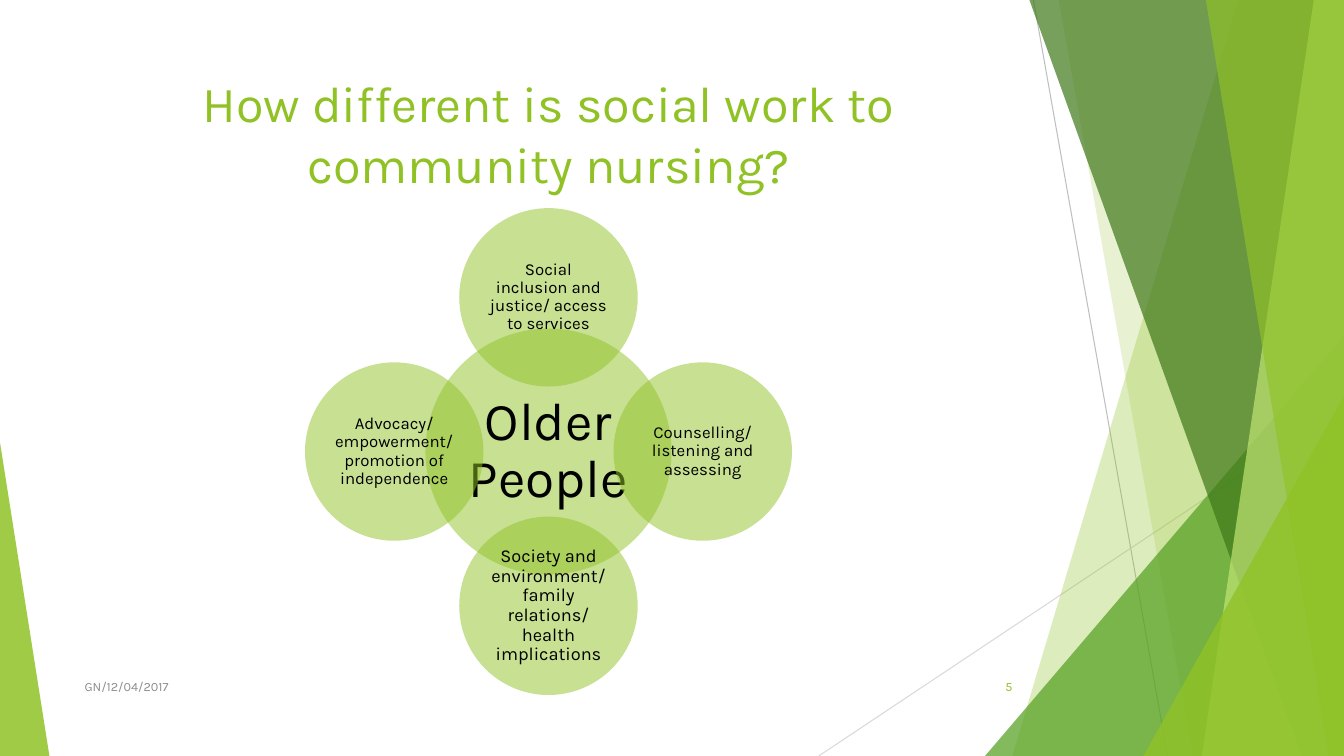
from dataclasses import dataclass

import pptx
import pptx.dml.color
import pptx.enum.dml
import pptx.enum.shapes
import pptx.enum.text
import pptx.oxml.ns
import pptx.util
from lxml import etree

Inches = pptx.util.Inches
Align = pptx.enum.text.PP_ALIGN
Anchor = pptx.enum.text.MSO_ANCHOR
Kind = pptx.enum.shapes.MSO_SHAPE

WIDTH, HEIGHT = 13.33, 7.5
GREEN = "90C226"
FONT = "Karla"


@dataclass
class Band:
    """A strip from its slanted left edge to the right side of the slide."""
    top: float
    foot: float
    color: str
    alpha: int


@dataclass
class Wedge:
    """A right triangle standing on the bottom of the slide."""
    left: float
    top: float
    width: float
    peak: float
    color: str
    alpha: int


@dataclass
class Disc:
    """A circle placed by its offset from the hub, in steps."""
    col: int
    row: int
    size: float
    text: str
    points: int
    inset: float = 0.02


@dataclass
class Ray:
    start: tuple[float, float]
    end: tuple[float, float]
    color: str


RAYS = [
    Ray((10.25, 0), (11.58, HEIGHT), "BFBFBF"),
    Ray((WIDTH, 4.03), (8.12, HEIGHT), "D9D9D9"),
]
PANES = [
    Band(12.28, 10.04, GREEN, 30),
    Band(10.5, 11.83, GREEN, 20),
    Wedge(9.77, 3.33, 3.56, 1, "54A021", 72),
    Band(10.21, 12.91, "3F7819", 70),
    Band(13.03, 11.92, "C0E474", 70),
    Band(11.96, 13.18, GREEN, 65),
    Wedge(11.34, 3.93, 1.99, 1, GREEN, 80),
    Wedge(0, 4.39, 0.49, 0, GREEN, 85),
]
HUB_X, HUB_Y, STEP = 5.44, 4.48, 1.53
PETAL = 1.77
DISCS = [
    Disc(0, 0, 2.44, "Older People", 38, 0.05),
    Disc(0, -1, PETAL, "Social inclusion and justice/ access to services", 12),
    Disc(1, 0, PETAL, "Counselling/listening and assessing", 12),
    Disc(0, 1, PETAL, "Society and environment/ family relations/ health implications", 13),
    Disc(-1, 0, PETAL, "Advocacy/empowerment/promotion of independence", 12),
]


def rgb(code: str) -> pptx.dml.color.RGBColor:
    return pptx.dml.color.RGBColor.from_string(code)


def paint(shape, color: str, alpha: int) -> None:
    """Give a flat fill with the opacity in percent, no line and no shadow."""
    shape.shadow.inherit = False
    shape.line.fill.background()
    shape.fill.solid()
    shape.fill.fore_color.rgb = rgb(color)
    tint = shape.fill._xPr.find(".//" + pptx.oxml.ns.qn("a:srgbClr"))
    etree.SubElement(tint, pptx.oxml.ns.qn("a:alpha"), val=str(alpha * 1000))


def write(shape, text: str, *, size: int, color: str, align=Align.CENTER,
          anchor=Anchor.MIDDLE, inset: float | None = None, pitch: float = 1) -> None:
    frame = shape.text_frame
    frame.word_wrap = True
    frame.auto_size = pptx.enum.text.MSO_AUTO_SIZE.NONE
    frame.vertical_anchor = anchor
    if inset is not None:
        frame.margin_left = frame.margin_right = Inches(inset)
        frame.margin_top = frame.margin_bottom = Inches(inset)
    para = frame.paragraphs[0]
    para.alignment = align
    para.line_spacing = pitch
    run = para.add_run()
    run.text = text
    run.font.name = FONT
    run.font.size = pptx.util.Pt(size)
    run.font.color.rgb = rgb(color)


def add_ray(shapes, ray: Ray) -> None:
    ends = [Inches(v) for v in ray.start + ray.end]
    line = shapes.add_connector(pptx.enum.shapes.MSO_CONNECTOR.STRAIGHT, *ends)
    line.line.color.rgb = rgb(ray.color)
    line.line.width = pptx.util.Pt(0.75)
    etree.SubElement(line._element.spPr, pptx.oxml.ns.qn("a:effectLst"))


def add_pane(shapes, pane: Band | Wedge) -> None:
    if isinstance(pane, Band):
        path = shapes.build_freeform(Inches(pane.top), 0)
        path.add_line_segments([(Inches(x), Inches(y)) for x, y in (
            (WIDTH, 0), (WIDTH, HEIGHT), (pane.foot, HEIGHT))])
        shape = path.convert_to_shape()
    else:
        shape = shapes.add_shape(
            Kind.ISOSCELES_TRIANGLE, Inches(pane.left), Inches(pane.top),
            Inches(pane.width), Inches(HEIGHT - pane.top))
        shape.adjustments[0] = pane.peak
    paint(shape, pane.color, pane.alpha)


def add_disc(shapes, disc: Disc) -> None:
    left = HUB_X + disc.col * STEP - disc.size / 2
    top = HUB_Y + disc.row * STEP - disc.size / 2
    shape = shapes.add_shape(Kind.OVAL, Inches(left), Inches(top),
                             Inches(disc.size), Inches(disc.size))
    paint(shape, GREEN, 50)
    write(shape, disc.text, size=disc.points, color="000000",
          inset=disc.inset, pitch=0.9)


def add_note(shapes, left: float, width: float, text: str, color: str, align) -> None:
    """Add a small line of text at the foot of the slide."""
    box = shapes.add_textbox(Inches(left), Inches(6.61), Inches(width), Inches(0.4))
    write(box, text, size=9, color=color, align=align)


def main() -> None:
    deck = pptx.Presentation()
    deck.slide_width, deck.slide_height = Inches(WIDTH), Inches(HEIGHT)
    slide = deck.slides.add_slide(deck.slide_layouts[5])
    shapes = slide.shapes
    for ray in RAYS:
        add_ray(shapes, ray)
    for pane in PANES:
        add_pane(shapes, pane)

    title = shapes.title
    title.left, title.top = Inches(0.74), Inches(0.67)
    title.width, title.height = Inches(9.4), Inches(1.44)
    write(title, "How different is social work to community nursing?",
          size=36, color=GREEN, anchor=Anchor.TOP)

    for disc in DISCS:
        add_disc(shapes, disc)
    add_note(shapes, 9.39, 0.75, "5", GREEN, Align.RIGHT)
    add_note(shapes, 0.74, 6.89, "GN/12/04/2017", "8C8C8C", Align.LEFT)
    deck.save("out.pptx")


if __name__ == "__main__":
    main()
